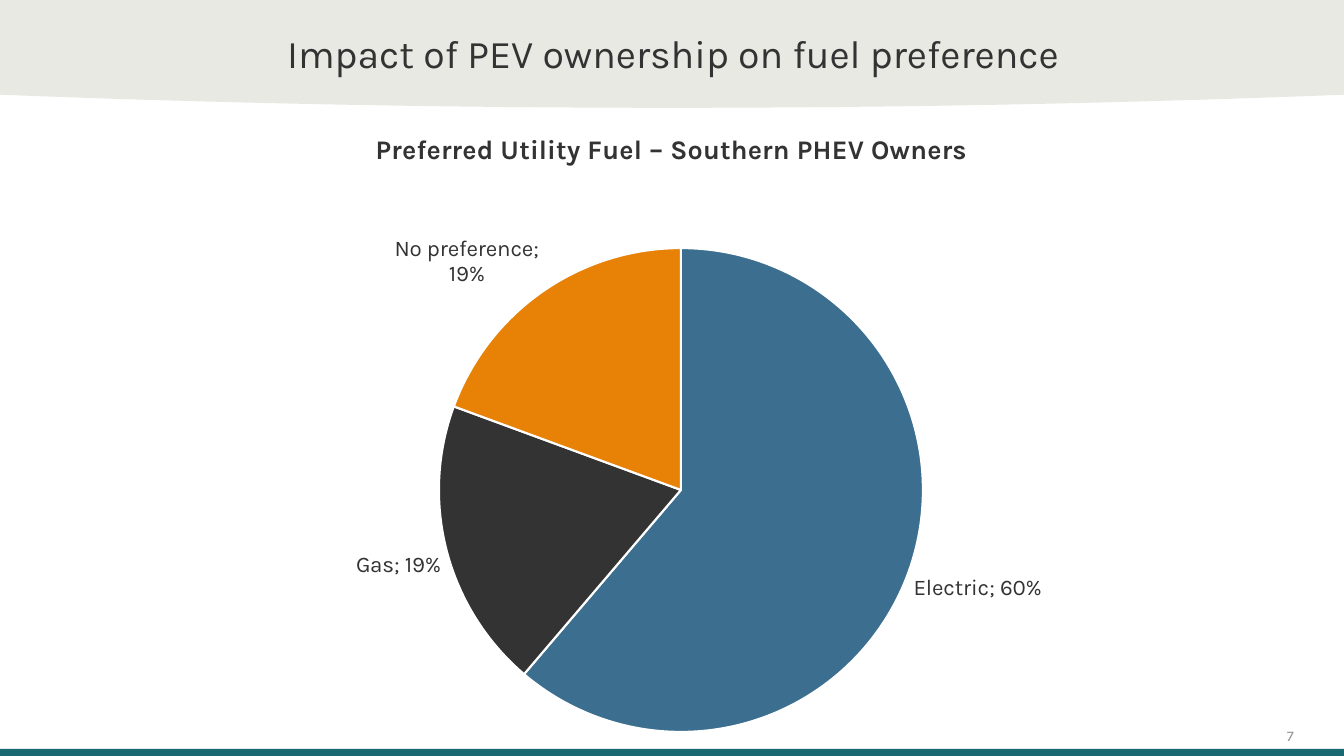
from dataclasses import dataclass

from lxml import etree
from pptx import Presentation
from pptx.chart.data import CategoryChartData
from pptx.dml.color import RGBColor
from pptx.enum.chart import XL_CHART_TYPE, XL_LABEL_POSITION
from pptx.enum.shapes import MSO_SHAPE
from pptx.enum.text import MSO_ANCHOR, PP_ALIGN
from pptx.oxml import parse_xml
from pptx.util import Inches, Pt

PIE = XL_CHART_TYPE.PIE
OUTSIDE_END = XL_LABEL_POSITION.OUTSIDE_END
RECTANGLE = MSO_SHAPE.RECTANGLE
MIDDLE, BOTTOM = MSO_ANCHOR.MIDDLE, MSO_ANCHOR.BOTTOM
CENTER, RIGHT = PP_ALIGN.CENTER, PP_ALIGN.RIGHT
CHART_NS = "http://schemas.openxmlformats.org/drawingml/2006/chart"
TITLE_ONLY = 5


@dataclass(frozen=True)
class Theme:
    font: str = "Karla"
    text: str = "333333"
    muted: str = "909090"
    band: str = "E9E9E3"
    footer: str = "196872"
    white: str = "FFFFFF"
    slices: tuple = ("3B6E8F", "333333", "E78207")
    title_size: float = 28
    chart_title_size: float = 19.2
    label_size: float = 16
    number_size: float = 10.5


THEME = Theme()


def style_font(font, size, color=THEME.text, bold=False):
    font.name = THEME.font
    font.size = Pt(size)
    font.bold = bold
    font.color.rgb = RGBColor.from_string(color)


def paint(shape, color):
    shape.shadow.inherit = False
    shape.fill.solid()
    shape.fill.fore_color.rgb = RGBColor.from_string(color)
    shape.line.fill.background()


def write(shape, text, size, color, alignment, anchor):
    frame = shape.text_frame
    frame.word_wrap = True
    frame.vertical_anchor = anchor
    frame.margin_left = frame.margin_right = 0
    frame.margin_top = frame.margin_bottom = 0
    paragraph = frame.paragraphs[0]
    paragraph.alignment = alignment
    run = paragraph.add_run()
    run.text = text
    style_font(run.font, size, color)


def add_header(slide, left, top, width, height, text):
    edge, steps = height - 0.13, 48
    curve = []
    for step in range(steps + 1):
        offset = 1 - 2 * step / steps
        depth = edge + (height - edge) * (1 - offset ** 2)
        curve.append((Inches(left + width * (1 + offset) / 2), Inches(top + depth)))
    builder = slide.shapes.build_freeform(Inches(left), Inches(top))
    builder.add_line_segments([(Inches(left + width), Inches(top))] + curve)
    paint(builder.convert_to_shape(), THEME.band)

    title = slide.shapes.title
    title.left, title.top = Inches(left + 2.6), Inches(top + 0.29)
    title.width, title.height = Inches(8.15), Inches(0.47)
    write(title, text, THEME.title_size, THEME.text, CENTER, MIDDLE)
    title.element.getparent().append(title.element)


def place_pie(chart, x, y, width, height):
    plot_area = chart.element.find(f".//{{{CHART_NS}}}plotArea")
    for layout in plot_area.findall(f"{{{CHART_NS}}}layout"):
        plot_area.remove(layout)
    layout = parse_xml(f'<c:layout xmlns:c="{CHART_NS}"><c:manualLayout/></c:layout>')
    settings = (("layoutTarget", "inner"), ("xMode", "edge"), ("yMode", "edge"),
                ("x", x), ("y", y), ("w", width), ("h", height))
    for tag, value in settings:
        etree.SubElement(layout[0], f"{{{CHART_NS}}}{tag}").set("val", str(value))
    plot_area.insert(0, layout)


def add_fuel_chart(slide, left, top, width, height):
    data = CategoryChartData(number_format="0%")
    data.categories = ["Electric", "Gas", "No preference"]
    data.add_series("Series 1", (0.6, 0.19, 0.19))
    chart = slide.shapes.add_chart(
        PIE, Inches(left), Inches(top), Inches(width), Inches(height), data).chart
    style_font(chart.font, THEME.label_size)
    chart.has_legend = False
    chart.has_title = True
    run = chart.chart_title.text_frame.paragraphs[0].add_run()
    run.text = "Preferred Utility Fuel – Southern PHEV Owners"
    style_font(run.font, THEME.chart_title_size, bold=True)

    plot = chart.plots[0]
    plot.vary_by_categories = True
    for index, color in enumerate(THEME.slices):
        slice_format = plot.series[0].points[index].format
        slice_format.fill.solid()
        slice_format.fill.fore_color.rgb = RGBColor.from_string(color)
        slice_format.line.color.rgb = RGBColor.from_string(THEME.white)
        slice_format.line.width = Pt(1.5)
    plot.has_data_labels = True
    labels = plot.data_labels
    labels.show_category_name = labels.show_value = True
    labels.show_percentage = False
    labels.number_format = "0%"
    labels.number_format_is_linked = False
    labels.position = OUTSIDE_END
    style_font(labels.font, THEME.label_size)
    place_pie(chart, 0.24, 0.22, 0.54, 0.76)


def add_footer(slide, left, top, width, height, number):
    bar = slide.shapes.add_shape(
        RECTANGLE, Inches(left), Inches(top), Inches(width), Inches(height))
    paint(bar, THEME.footer)
    box = slide.shapes.add_textbox(
        Inches(left + width - 3.61), Inches(top - 0.44), Inches(3.11), Inches(0.4))
    write(box, number, THEME.number_size, THEME.muted, RIGHT, BOTTOM)


def main():
    presentation = Presentation()
    presentation.slide_width = Inches(13.33)
    presentation.slide_height = Inches(7.5)
    slide = presentation.slides.add_slide(presentation.slide_layouts[TITLE_ONLY])
    add_footer(slide, 0, 7.43, 13.33, 0.07, "7")
    add_fuel_chart(slide, 2.22, 1.07, 8.89, 6.32)
    add_header(slide, 0, 0, 13.33, 1.07, "Impact of PEV ownership on fuel preference")
    presentation.save("out.pptx")


if __name__ == "__main__":
    main()
